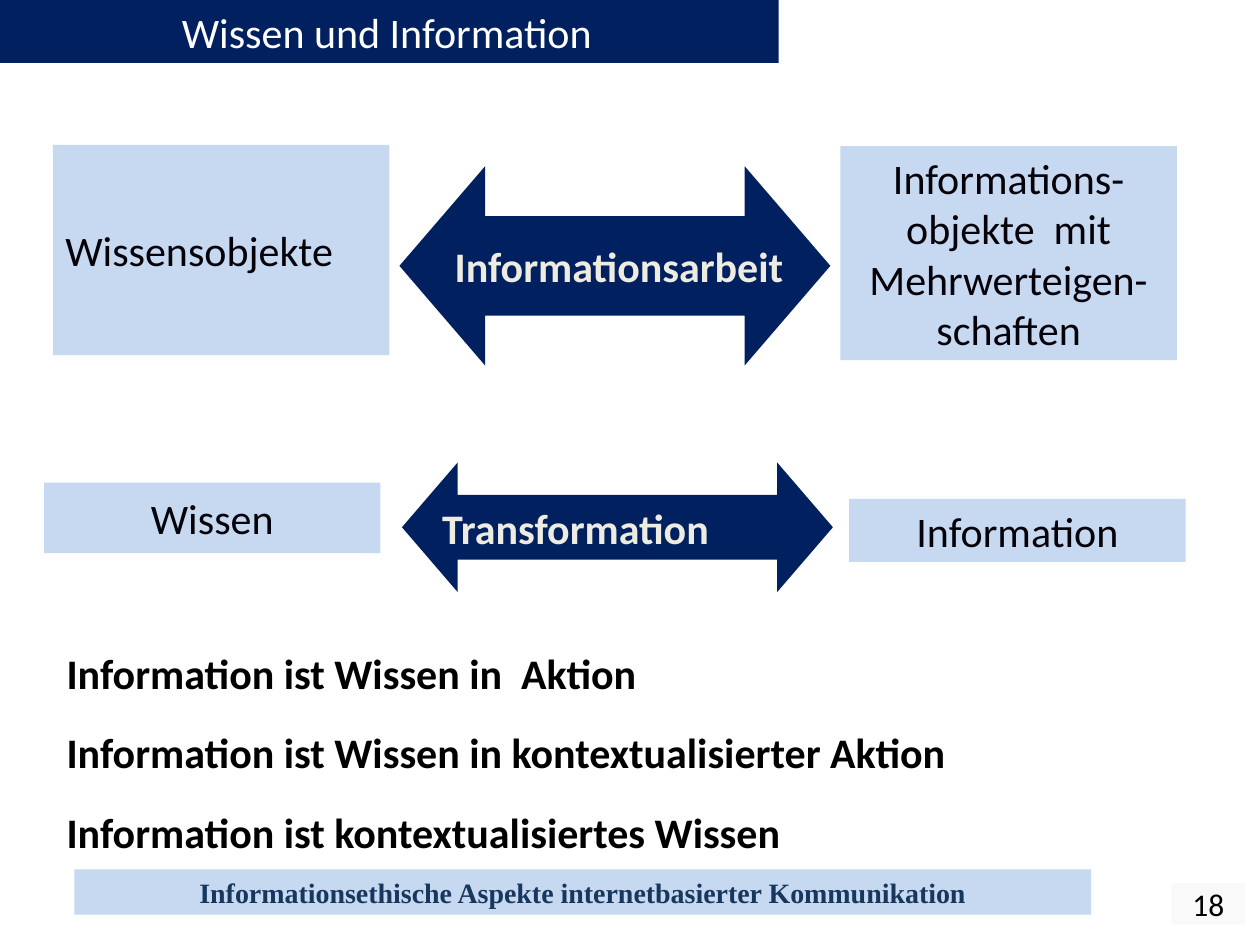
import pptx
import pptx.util
import pptx.dml.color
import pptx.enum.shapes
import pptx.enum.text

Inches = pptx.util.Inches
MSO = pptx.enum.shapes.MSO_SHAPE
ALIGN = pptx.enum.text.PP_ALIGN
ANCHOR = pptx.enum.text.MSO_ANCHOR

NAVY, LIGHT, INK, CREAM = "002060", "C6D9F1", "060209", "EEECE1"

# text, (left, top, width, height), alignment
BOXES = [
    ("Wissensobjekte", (0.42, 1.15, 2.67, 1.67), ALIGN.LEFT),
    ("Informations-objekte  mit Mehrwerteigen-schaften", (6.67, 1.16, 2.67, 1.7), ALIGN.CENTER),
    ("Wissen", (0.35, 3.83, 2.67, 0.56), ALIGN.CENTER),
    ("Information", (6.74, 3.96, 2.67, 0.5), ALIGN.CENTER),
]
ARROWS = [
    ("Informationsarbeit", (3.17, 1.32, 3.42, 1.58)),
    ("Transformation", (3.19, 3.67, 3.42, 1.03)),
]
STATEMENTS = [
    "Information ist Wissen in  Aktion",
    "Information ist Wissen in kontextualisierter Aktion",
    "Information ist kontextualisiertes Wissen",
]
STATEMENT_TOP, STATEMENT_STEP = 5.09, 0.63


def rgb(value):
    return pptx.dml.color.RGBColor.from_string(value)


def write(sp, text, color, size=24, bold=False, align=ALIGN.CENTER,
          anchor=ANCHOR.MIDDLE, font="Calibri"):
    tf = sp.text_frame
    tf.word_wrap = True
    tf.vertical_anchor = anchor
    tf.text = text
    p = tf.paragraphs[0]
    p.alignment = align
    f = p.runs[0].font
    f.name, f.size, f.bold = font, pptx.util.Pt(size), bold
    f.color.rgb = rgb(color)


def add_block(s, at, fill, kind=MSO.RECTANGLE):
    """Add a filled shape without line or shadow."""
    sp = s.shapes.add_shape(kind, *map(Inches, at))
    sp.shadow.inherit = False
    sp.fill.solid()
    sp.fill.fore_color.rgb = rgb(fill)
    sp.line.fill.background()
    return sp


def main():
    prs = pptx.Presentation()
    prs.slide_width, prs.slide_height = Inches(10), Inches(7.5)
    s = prs.slides.add_slide(prs.slide_layouts[6])

    number = add_block(s, (9.3, 7.01, 0.58, 0.33), "F9F9F9")
    write(number, "18", "000000", size=18)
    footer = add_block(s, (0.59, 6.9, 8.07, 0.36), LIGHT)
    write(footer, "Informationsethische Aspekte internetbasierter Kommunikation",
          "17375E", size=16, bold=True, font="Times New Roman")
    title = add_block(s, (-0.04, 0, 6.22, 0.5), NAVY)
    write(title, "Wissen und Information", "FFFFFF", anchor=ANCHOR.TOP)

    for text, at, align in BOXES:
        write(add_block(s, at, LIGHT), text, INK, align=align)

    for text, at in ARROWS:
        arrow = add_block(s, at, NAVY, MSO.LEFT_RIGHT_ARROW)
        arrow.adjustments[0], arrow.adjustments[1] = 0.5, 0.43
        arrow.text_frame.margin_right = 0
        write(arrow, text, CREAM, bold=True, align=ALIGN.LEFT)

    for i, text in enumerate(STATEMENTS):
        top = STATEMENT_TOP + i * STATEMENT_STEP
        box = s.shapes.add_textbox(*map(Inches, (0.43, top, 8.11, 0.5)))
        write(box, text, "000000", bold=True, align=ALIGN.LEFT, anchor=ANCHOR.TOP)

    prs.save("out.pptx")


if __name__ == "__main__":
    main()
